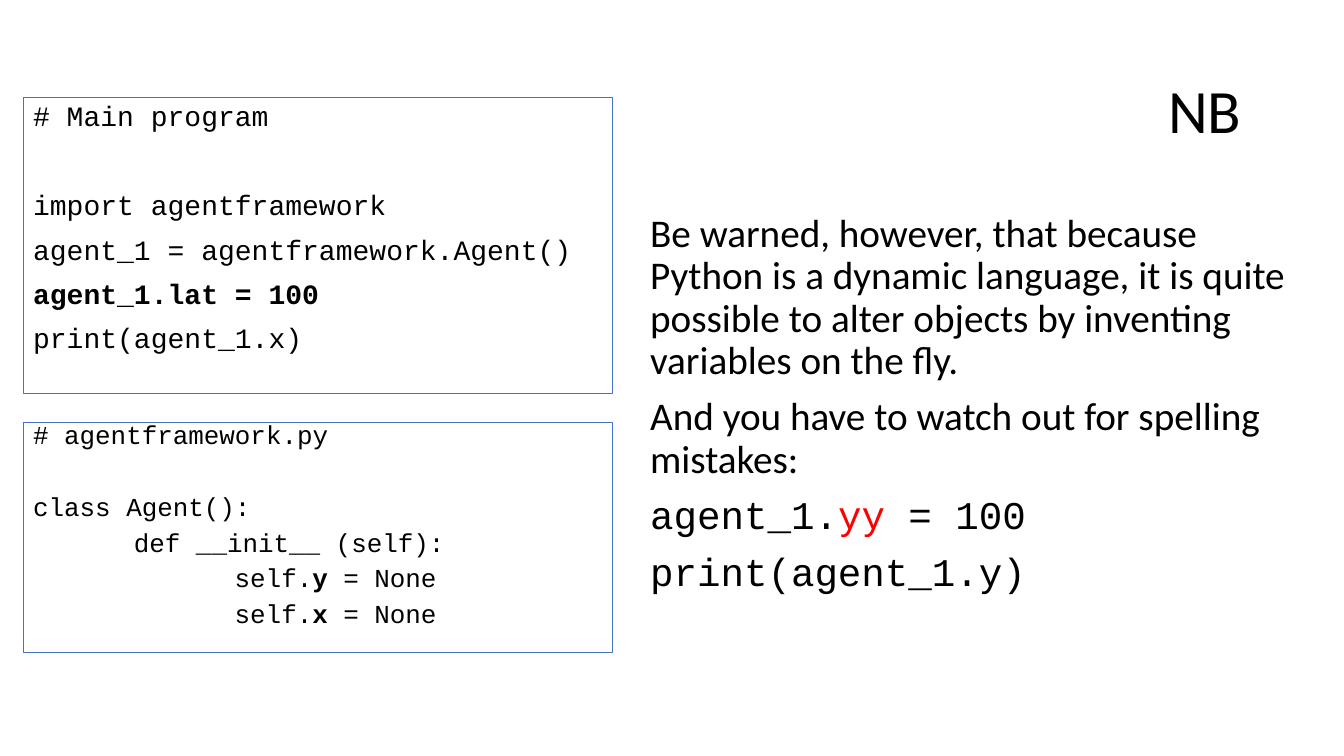
import pptx
import pptx.util
import pptx.dml.color
import pptx.enum.shapes
import pptx.enum.text
import lxml.etree

Pt = pptx.util.Pt
PLAIN, BOLD, WRONG = "plain", "bold", "wrong"
BLACK, RED, BORDER = "000000", "FF0000", "4472C4"
PROSE, CODE = "Calibri", "Courier New"
INDENT_STEP = 72
PARAGRAPH_GAP = 10

heading = "NB"
warnings = [
    "Be warned, however, that because Python is a dynamic language, it is quite "
    "possible to alter objects by inventing variables on the fly.",
    "And you have to watch out for spelling mistakes:",
]
misspelling = [
    [("agent_1.", PLAIN), ("yy", WRONG), (" = 100", PLAIN)],
    [("print(agent_1.y)", PLAIN)],
]
listings = [
    dict(top=69.84, height=210.96, size=20, spacing=0.9, section_gap=42, lines=[
        (0, [("# Main program", PLAIN)]),
        (0, [("import agentframework", PLAIN)]),
        (0, [("agent_1 = agentframework.Agent()", PLAIN)]),
        (0, [("agent_1.lat = 100", BOLD)]),
        (0, [("print(agent_1.x)", PLAIN)]),
    ]),
    dict(top=301.68, height=164.16, size=18.5, spacing=0.7, section_gap=35.5, lines=[
        (0, [("# agentframework.py", PLAIN)]),
        (0, [("class Agent():", PLAIN)]),
        (1, [("def __init__ (self):", PLAIN)]),
        (2, [("self.", PLAIN), ("y ", BOLD), ("= None", PLAIN)]),
        (2, [("self.", PLAIN), ("x ", BOLD), ("= None", PLAIN)]),
    ]),
]


def rgb(code):
    return pptx.dml.color.RGBColor.from_string(code)


def place(shape, left, top, width, height):
    shape.left, shape.top = Pt(left), Pt(top)
    shape.width, shape.height = Pt(width), Pt(height)


def write(paragraph, pieces, font=PROSE, size=28, spacing=0.9,
          before=PARAGRAPH_GAP, align=pptx.enum.text.PP_ALIGN.LEFT, level=0):
    paragraph.alignment = align
    paragraph.line_spacing = spacing
    paragraph.space_before = Pt(before)
    properties = paragraph._p.get_or_add_pPr()
    properties.set("marL", str(Pt(INDENT_STEP * level)))
    properties.set("indent", "0")
    lxml.etree.SubElement(properties, pptx.oxml.ns.qn("a:buNone"))
    for words, style in pieces:
        run = paragraph.add_run()
        run.text = words
        run.font.name = font
        run.font.size = Pt(size)
        run.font.bold = style == BOLD
        run.font.color.rgb = rgb(RED if style == WRONG else BLACK)


def next_paragraph(frame, index):
    return frame.add_paragraph() if index else frame.paragraphs[0]


def prepare(frame, anchor):
    frame.word_wrap = True
    frame.auto_size = pptx.enum.text.MSO_AUTO_SIZE.NONE
    frame.vertical_anchor = anchor
    return frame


TOP = pptx.enum.text.MSO_ANCHOR.TOP
MIDDLE = pptx.enum.text.MSO_ANCHOR.MIDDLE

deck = pptx.Presentation()
deck.slide_width, deck.slide_height = Pt(960), Pt(540)
slide = deck.slides.add_slide(deck.slide_layouts[1])

title = slide.shapes.title
place(title, 66, 28.8, 828, 104.4)
write(prepare(title.text_frame, MIDDLE).paragraphs[0], [(heading, PLAIN)],
      size=44, before=0, align=pptx.enum.text.PP_ALIGN.RIGHT)

advice = slide.placeholders[1]
place(advice, 457.2, 149.04, 483.12, 342.72)
advice_frame = prepare(advice.text_frame, TOP)
advice_lines = [([(sentence, PLAIN)], PROSE) for sentence in warnings]
advice_lines += [(pieces, CODE) for pieces in misspelling]
for index, (pieces, font) in enumerate(advice_lines):
    write(next_paragraph(advice_frame, index), pieces, font=font)

for listing in listings:
    panel = slide.shapes.add_shape(pptx.enum.shapes.MSO_SHAPE.RECTANGLE, 0, 0, 0, 0)
    place(panel, 16.56, listing["top"], 421.2, listing["height"])
    panel.shadow.inherit = False
    panel.fill.background()
    panel.line.color.rgb = rgb(BORDER)
    panel.line.width = Pt(0.75)
    panel_frame = prepare(panel.text_frame, TOP)
    for index, (level, pieces) in enumerate(listing["lines"]):
        write(next_paragraph(panel_frame, index), pieces, font=CODE,
              size=listing["size"], spacing=listing["spacing"], level=level,
              before=listing["section_gap"] if index == 1 else PARAGRAPH_GAP)

deck.save("out.pptx")
